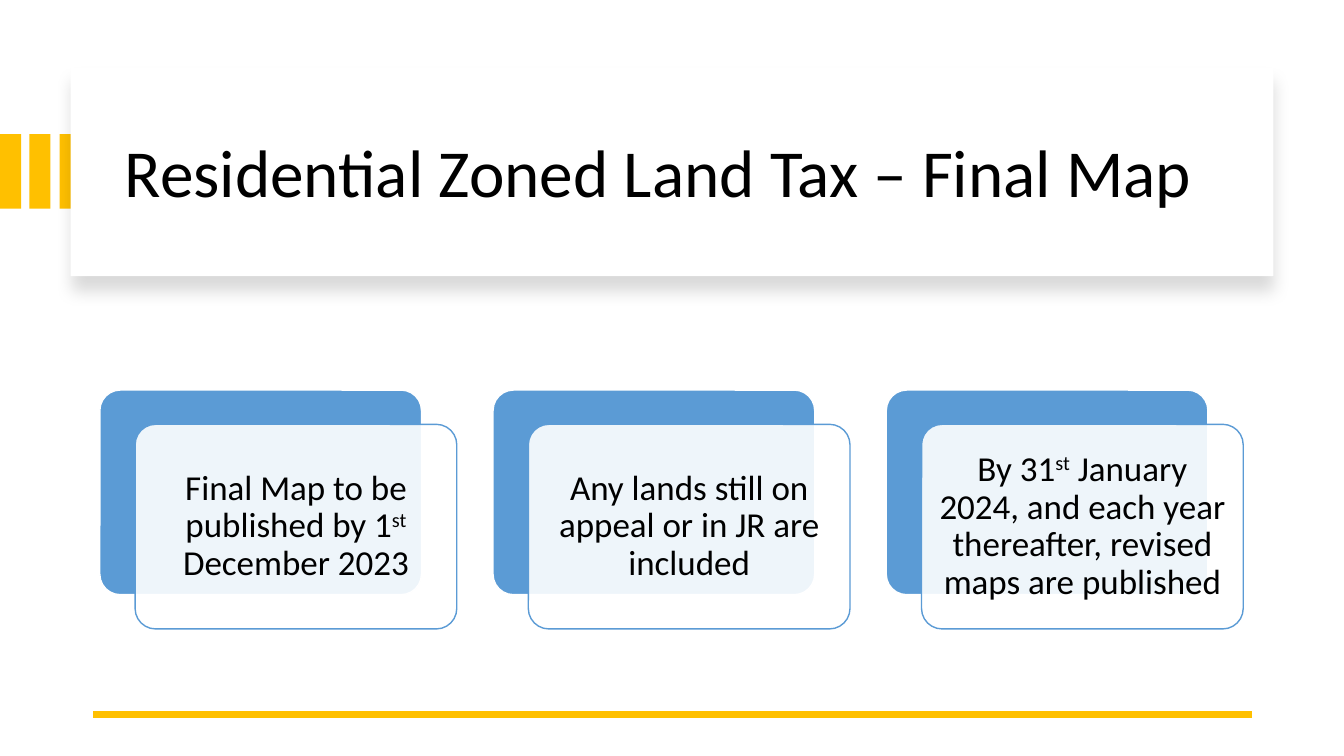
from lxml.etree import SubElement
from pptx import Presentation
from pptx.dml.color import RGBColor
from pptx.enum.shapes import MSO_CONNECTOR, MSO_SHAPE
from pptx.enum.text import MSO_ANCHOR, PP_ALIGN
from pptx.oxml.ns import qn
from pptx.util import Emu, Pt

PX = 9144  # 100 px to the inch
FONT = "Calibri"
WHITE = RGBColor(0xFF, 0xFF, 0xFF)
BLACK = RGBColor(0, 0, 0)
GOLD = RGBColor(0xFF, 0xC0, 0x00)
BLUE = RGBColor(0x5B, 0x9B, 0xD5)

# Each card is a list of runs: (text, is superscript)
CARDS = [
    [("Final Map to be published by 1", False), ("st", True),
     (" December 2023", False)],
    [("Any lands still on appeal or in JR are included", False)],
    [("By 31", False), ("st", True),
     (" January 2024, and each year thereafter, revised maps are published", False)],
]


def px(*values):
    return [Emu(v * PX) for v in values]


def add_box(slide, box, fill, line=None, kind=MSO_SHAPE.RECTANGLE):
    sp = slide.shapes.add_shape(kind, *px(*box))
    sp.shadow.inherit = False
    sp.fill.solid()
    sp.fill.fore_color.rgb = fill
    if line is None:
        sp.line.fill.background()
    else:
        sp.line.color.rgb = line
        sp.line.width = Pt(1)
    if kind == MSO_SHAPE.ROUNDED_RECTANGLE:
        sp.adjustments[0] = 0.1
    return sp


def set_alpha(color, percent):
    SubElement(color, qn("a:alpha"), val=str(percent * 1000))


def add_shadow(sp):
    effects = sp._element.spPr.find(qn("a:effectLst"))
    shadow = SubElement(effects, qn("a:outerShdw"), blurRad=str(Pt(11)),
                        dist=str(Pt(10)), dir="5400000", algn="t", rotWithShape="0")
    set_alpha(SubElement(shadow, qn("a:srgbClr"), val=str(BLACK)), 15)


def write(sp, runs, size, align, after):
    tf = sp.text_frame
    tf.word_wrap = True
    tf.vertical_anchor = MSO_ANCHOR.MIDDLE
    p = tf.paragraphs[0]
    p.alignment = align
    p.line_spacing = 0.9
    p.space_after = Pt(after)
    for text, superscript in runs:
        r = p.add_run()
        r.text = text
        r.font.name = FONT
        r.font.size = Pt(size)
        r.font.color.rgb = BLACK
        if superscript:
            r._r.get_or_add_rPr().set("baseline", "30000")
    return tf


def add_card(slide, left, runs):
    rounded = MSO_SHAPE.ROUNDED_RECTANGLE
    add_box(slide, (left, 387, 319, 203), BLUE, WHITE, rounded)
    front = add_box(slide, (left + 35, 421, 319, 203), WHITE, BLUE, rounded)
    set_alpha(front._element.spPr.find(qn("a:solidFill"))[0], 90)
    tf = write(front, runs, 25, PP_ALIGN.CENTER, 8.75)
    tf.margin_left, tf.margin_top, tf.margin_right, tf.margin_bottom = px(10, 10, 10, 10)


def add_rule(slide, start, end):
    cxn = slide.shapes.add_connector(MSO_CONNECTOR.STRAIGHT, *px(*start, *end))
    cxn.line.color.rgb = GOLD
    cxn.line.width = Pt(4.5)
    SubElement(cxn._element.spPr, qn("a:effectLst"))


def main():
    prs = Presentation()
    prs.slide_width, prs.slide_height = px(1333, 750)
    slide = prs.slides.add_slide(prs.slide_layouts[6])

    # Gold bars at the left edge
    for i in range(3):
        add_box(slide, (i * 59 // 2, 133, 21, 74), GOLD)

    # Title panel
    add_shadow(add_box(slide, (70, 67, 1193, 207), WHITE))
    title = slide.shapes.add_textbox(*px(114, 89, 1113, 170))
    write(title, [("Residential Zoned Land Tax – Final Map", False)],
          48, PP_ALIGN.LEFT, 6)

    # Bottom rule
    add_rule(slide, (1242, 709), (92, 709))

    # Three cards
    for i, runs in enumerate(CARDS):
        add_card(slide, 99 + i * 390, runs)

    prs.save("out.pptx")


if __name__ == "__main__":
    main()
